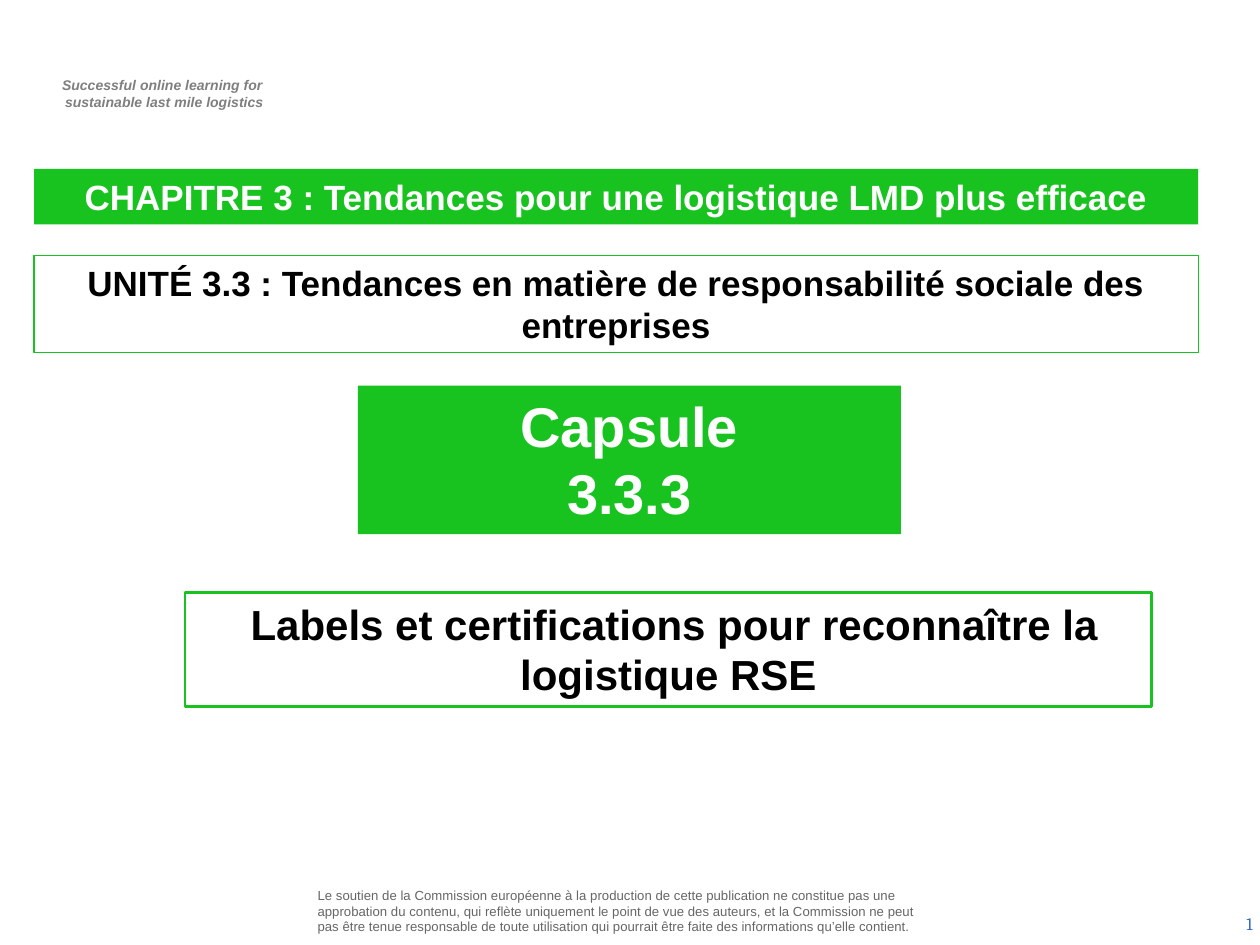
from pptx import Presentation
from pptx.dml.color import RGBColor
from pptx.enum.shapes import MSO_SHAPE
from pptx.enum.text import MSO_ANCHOR, MSO_AUTO_SIZE, PP_ALIGN
from pptx.util import Inches, Pt

GREEN = RGBColor(0x18, 0xC3, 0x20)
WHITE = RGBColor(0xFF, 0xFF, 0xFF)
BLACK = RGBColor(0, 0, 0)
TAGLINE_GRAY = RGBColor(0x7F, 0x7F, 0x7F)
NOTICE_GRAY = RGBColor(0x66, 0x66, 0x66)
NUMBER_BLUE = RGBColor(0x33, 0x66, 0xCC)
LEFT, CENTER, RIGHT = PP_ALIGN.LEFT, PP_ALIGN.CENTER, PP_ALIGN.RIGHT
TOP, MIDDLE = MSO_ANCHOR.TOP, MSO_ANCHOR.MIDDLE
RECTANGLE = MSO_SHAPE.RECTANGLE
NO_AUTOFIT = MSO_AUTO_SIZE.NONE
TITLE_ONLY = 5

# Grid of square cells, a tenth of an inch each
COLUMNS, ROWS = 100, 75
CELL = Inches(0.1)


def write_text(shape, text, size, color, font="Arial", bold=False, italic=False,
               align=CENTER, anchor=TOP, insets=(0.1, 0.05)):
    """Fill a shape with formatted text, one paragraph per line."""
    frame = shape.text_frame
    frame.auto_size = NO_AUTOFIT
    frame.word_wrap = True
    frame.vertical_anchor = anchor
    frame.margin_left = frame.margin_right = Inches(insets[0])
    frame.margin_top = frame.margin_bottom = Inches(insets[1])
    frame.text = text
    for paragraph in frame.paragraphs:
        paragraph.alignment = align
        paragraph.font.name = font
        paragraph.font.size = Pt(size)
        paragraph.font.bold = bold
        paragraph.font.italic = italic
        paragraph.font.color.rgb = color


class CoverSlide:
    """Holds the cover style and the slide being built."""

    def __init__(self, presentation):
        self.slide = presentation.slides.add_slide(presentation.slide_layouts[TITLE_ONLY])

    @staticmethod
    def area(column, row, columns, rows):
        return [round(cells * CELL) for cells in (column, row, columns, rows)]

    def title(self, text, area, size):
        shape = self.slide.shapes.title
        shape.left, shape.top, shape.width, shape.height = self.area(*area)
        shape.fill.solid()
        shape.fill.fore_color.rgb = GREEN
        write_text(shape, text, size, WHITE, bold=True)

    def banner(self, text, area, size):
        shape = self.rectangle(area)
        shape.fill.solid()
        shape.fill.fore_color.rgb = GREEN
        shape.line.fill.background()
        write_text(shape, text, size, WHITE, bold=True)

    def frame(self, text, area, size, line_width):
        shape = self.rectangle(area)
        shape.fill.background()
        shape.line.color.rgb = GREEN
        shape.line.width = Pt(line_width)
        write_text(shape, text, size, BLACK, bold=True)

    def label(self, text, area, size, color, **text_format):
        shape = self.slide.shapes.add_textbox(*self.area(*area))
        write_text(shape, text, size, color, **text_format)

    def rectangle(self, area):
        shape = self.slide.shapes.add_shape(RECTANGLE, *self.area(*area))
        shape.shadow.inherit = False
        return shape


def main():
    presentation = Presentation()
    presentation.slide_width = COLUMNS * CELL
    presentation.slide_height = ROWS * CELL
    cover = CoverSlide(presentation)

    # Tagline, funding notice and page number
    cover.label("Successful online learning for \nsustainable last mile logistics",
                (2.9, 5.6, 20.3, 3.7), 8, TAGLINE_GRAY, bold=True, italic=True)
    cover.label("Le soutien de la Commission européenne à la production de cette "
                "publication ne constitue pas une approbation du contenu, qui reflète "
                "uniquement le point de vue des auteurs, et la Commission ne peut pas "
                "être tenue responsable de toute utilisation qui pourrait être faite "
                "des informations qu’elle contient.",
                (24.8, 69.8, 48.9, 5), 7.5, NOTICE_GRAY,
                align=LEFT, anchor=MIDDLE, insets=(0.04, 0.04))
    cover.label("1", (77.1, 71.3, 23.3, 4), 10, NUMBER_BLUE,
                font="Cambria", align=RIGHT, anchor=MIDDLE)

    # Chapter, unit and capsule headings
    cover.title("CHAPITRE 3 : Tendances pour une logistique LMD plus efficace",
                (2.7, 13.4, 92.4, 4.4), 20)
    cover.frame("UNITÉ 3.3 : Tendances en matière de responsabilité sociale des entreprises",
                (2.7, 20.3, 92.4, 7.7), 20, 0.75)
    cover.banner("Capsule\n3.3.3", (28.4, 30.6, 43.1, 11.8), 32)
    cover.frame(" Labels et certifications pour reconnaître la logistique RSE",
                (14.7, 47, 76.7, 9.1), 24, 1.5)

    presentation.save("out.pptx")


if __name__ == "__main__":
    main()
